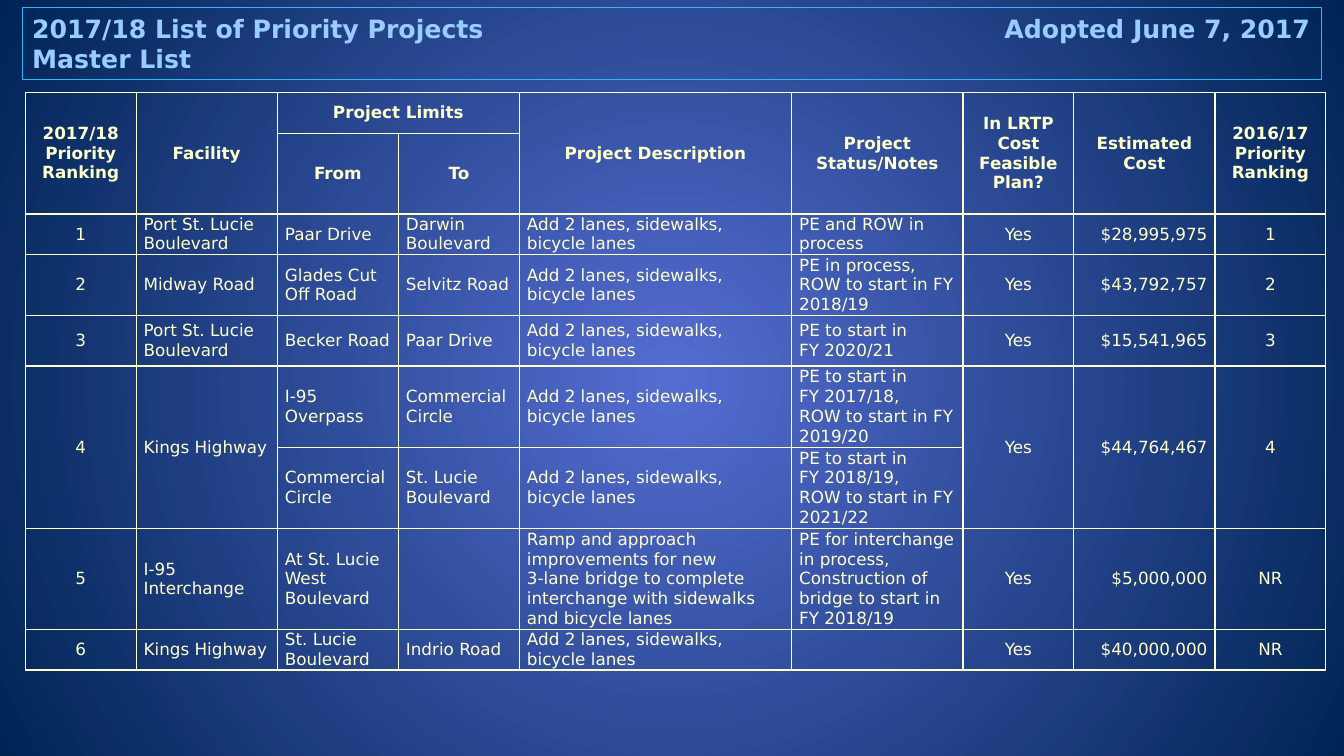
from lxml import etree
from pptx import Presentation
from pptx.dml.color import RGBColor
from pptx.enum.text import MSO_ANCHOR, PP_ALIGN
from pptx.oxml import parse_xml
from pptx.oxml.ns import nsdecls, qn
from pptx.util import Cm, Pt

LEFT, MID, RIGHT = PP_ALIGN.LEFT, PP_ALIGN.CENTER, PP_ALIGN.RIGHT
CENTRE = MSO_ANCHOR.MIDDLE
FACE = "DejaVu Sans"
CREAM, SKY, EDGE = "FFFFCC", "99CCFF", "31B6FD"
GLOW, NAVY = "556DD2", "002454"

COLS = [2.79, 3.56, 3.05, 3.05, 6.86, 4.32, 2.79, 3.56, 2.79]
ROWS = [1.02, 2.03, 1.02, 1.54, 1.27, 2.05, 2.05, 2.54, 1.02]
ALIGNS = [MID, LEFT, LEFT, LEFT, LEFT, LEFT, MID, RIGHT, MID]
HEADS = 2  # header rows
LANES = "Add 2 lanes, sidewalks, bicycle lanes"
CELLS = [
    ["2017/18 Priority Ranking", "Facility", "Project Limits", "",
     "Project Description", "Project Status/Notes",
     "In LRTP Cost Feasible Plan?", "Estimated Cost",
     "2016/17 Priority Ranking"],
    ["", "", "From", "To", "", "", "", "", ""],
    ["1", "Port St. Lucie Boulevard", "Paar Drive", "Darwin Boulevard", LANES,
     "PE and ROW in process", "Yes", "$28,995,975", "1"],
    ["2", "Midway Road", "Glades Cut Off Road", "Selvitz Road", LANES,
     "PE in process, ROW to start in FY 2018/19", "Yes", "$43,792,757", "2"],
    ["3", "Port St. Lucie Boulevard", "Becker Road", "Paar Drive", LANES,
     "PE to start in\nFY 2020/21", "Yes", "$15,541,965", "3"],
    ["4", "Kings Highway", "I-95 Overpass", "Commercial Circle", LANES,
     "PE to start in\nFY 2017/18,\nROW to start in FY 2019/20",
     "Yes", "$44,764,467", "4"],
    ["", "", "Commercial Circle", "St. Lucie Boulevard", LANES,
     "PE to start in\nFY 2018/19,\nROW to start in FY 2021/22", "", "", ""],
    ["5", "I-95 Interchange", "At St. Lucie West Boulevard", "",
     "Ramp and approach improvements for new\n"
     "3-lane bridge to complete interchange with sidewalks and bicycle lanes",
     "PE for interchange in process, Construction of bridge to start in "
     "FY 2018/19", "Yes", "$5,000,000", "NR"],
    ["6", "Kings Highway", "St. Lucie Boulevard", "Indrio Road", LANES,
     "", "Yes", "$40,000,000", "NR"],
]
# Each span: top row, left column, bottom row, right column
SPANS = [(0, 2, 0, 3)]
SPANS += [(0, c, 1, c) for c in (0, 1, 4, 5, 6, 7, 8)]
SPANS += [(5, c, 6, c) for c in (0, 1, 6, 7, 8)]


def paint(code):
    return RGBColor.from_string(code)


def style(para, size, color, bold):
    font = para.font
    font.name, font.size, font.bold = FACE, Pt(size), bold
    font.color.rgb = paint(color)


def backdrop(slide):
    fill = slide.background.fill
    fill.gradient()
    for stop, color in zip(fill.gradient_stops, (GLOW, NAVY)):
        stop.color.rgb = paint(color)
    # Turn the linear gradient into a round one
    grad = slide.element.find(".//" + qn("a:gradFill"))
    grad.replace(grad.find(qn("a:lin")), parse_xml(
        f'<a:path {nsdecls("a")} path="circle"><a:fillToRect l="50000" '
        't="50000" r="50000" b="50000"/></a:path>'))


def banner(slide, x, y, w, h):
    box = slide.shapes.add_textbox(Cm(x), Cm(y), Cm(w), Cm(h))
    box.line.color.rgb = paint(EDGE)
    box.line.width = Pt(0.75)
    frame = box.text_frame
    frame.word_wrap = True
    frame.text = ("2017/18 List of Priority Projects\tAdopted June 7, 2017\n"
                  "Master List")
    # Right tab that holds the date
    props = frame.paragraphs[0]._p.get_or_add_pPr()
    tabs = etree.SubElement(props, qn("a:tabLst"))
    etree.SubElement(tabs, qn("a:tab"), pos=str(Cm(w - 0.53)), algn="r")
    for para in frame.paragraphs:
        style(para, 18, SKY, True)


def border(cell):
    props = cell._tc.get_or_add_tcPr()
    for i, side in enumerate("LRTB"):
        props.insert(i, parse_xml(
            f'<a:ln{side} {nsdecls("a")} w="{Pt(1)}"><a:solidFill>'
            f'<a:srgbClr val="{CREAM}"/></a:solidFill></a:ln{side}>'))


def grid(slide, x, y):
    table = slide.shapes.add_table(
        len(ROWS), len(COLS), Cm(x), Cm(y),
        Cm(sum(COLS)), Cm(sum(ROWS))).table
    table.first_row = table.horz_banding = False
    for col, width in zip(table.columns, COLS):
        col.width = Cm(width)
    for row, height in zip(table.rows, ROWS):
        row.height = Cm(height)
    # Cell text and looks
    for r, line in enumerate(CELLS):
        head = r < HEADS
        for c, text in enumerate(line):
            cell = table.cell(r, c)
            cell.text = text
            cell.vertical_anchor = CENTRE
            cell.margin_left = cell.margin_right = Cm(0.19)
            cell.margin_top = cell.margin_bottom = 0
            cell.fill.background()
            border(cell)
            for para in cell.text_frame.paragraphs:
                para.alignment = MID if head else ALIGNS[c]
                style(para, 12, CREAM, head)
    # Joined cells
    for top, left, bottom, right in SPANS:
        table.cell(top, left).merge(table.cell(bottom, right))


def main():
    deck = Presentation()
    deck.slide_width, deck.slide_height = Cm(33.87), Cm(19.05)
    slide = deck.slides.add_slide(deck.slide_layouts[6])
    backdrop(slide)
    banner(slide, 0.56, 0.2, 32.74, 1.8)
    grid(slide, 0.64, 2.34)
    deck.save("out.pptx")


if __name__ == "__main__":
    main()
